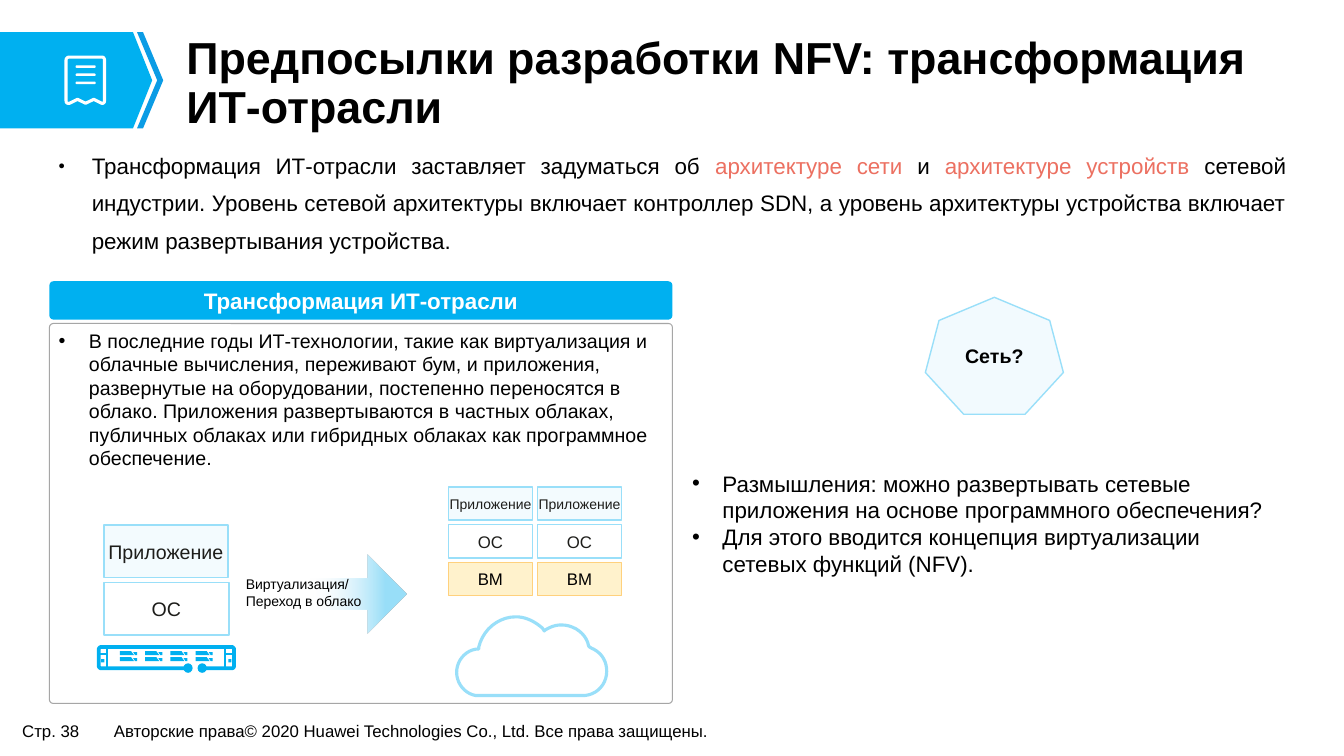
from dataclasses import dataclass

from lxml.etree import SubElement
from pptx import Presentation
from pptx.dml.color import RGBColor
from pptx.enum.shapes import MSO_CONNECTOR, MSO_SHAPE as Shape
from pptx.enum.text import MSO_ANCHOR as Anchor, PP_ALIGN as Align
from pptx.oxml.ns import qn
from pptx.util import Pt


@dataclass(frozen=True)
class Theme:
    font: str = "Arial"
    accent: str = "00B0F0"
    accent_dark: str = "0B9CE5"
    accent_soft: str = "99DFF9"
    accent_pale: str = "F3FBFE"
    arrow_start: str = "F7FAFD"
    machine_fill: str = "FFF2CC"
    machine_line: str = "FFD17D"
    panel_line: str = "A6A6A6"
    highlight: str = "EC7061"
    ink: str = "1D1D1A"
    black: str = "000000"
    white: str = "FFFFFF"
    title: int = 32
    body: int = 16
    label: int = 14
    small: int = 12
    tiny: int = 10


def rgb(color):
    return RGBColor.from_string(color)


def set_opacity(color_element, percent):
    SubElement(color_element, qn("a:alpha"), val=str(percent * 1000))


def add_bullet(paragraph, indent, character, percent):
    properties = paragraph._p.get_or_add_pPr()
    properties.set("marL", str(Pt(indent)))
    properties.set("indent", str(-Pt(indent)))
    SubElement(properties, qn("a:buSzPct"), val=str(percent * 1000))
    SubElement(properties, qn("a:buFont"), typeface="Arial")
    SubElement(properties, qn("a:buChar"), char=character)


def flatten(start, segments, steps=10):
    """Turn segments of one point (line) or three points (Bezier curve) into points."""
    points = [start]
    for segment in segments:
        if len(segment) == 2:
            points.append(segment)
            continue
        x0, y0 = points[-1]
        x1, y1, x2, y2, x3, y3 = segment
        for step in range(1, steps + 1):
            t = step / steps
            a, b, c, d = (1 - t) ** 3, 3 * t * (1 - t) ** 2, 3 * t * t * (1 - t), t ** 3
            points.append((a * x0 + b * x1 + c * x2 + d * x3,
                           a * y0 + b * y1 + c * y2 + d * y3))
    return points


class SlideBuilder:
    def __init__(self, slide, theme):
        self.shapes = slide.shapes
        self.theme = theme

    def put_text(self, shape, content, size=14, color=None, bold=False, align=Align.LEFT,
                 anchor=Anchor.TOP, inset=(7.2, 3.6), wrap=True, bullet=None, spacing=None):
        """Content is a list of paragraphs; each is a string or a list of (text, color)."""
        frame = shape.text_frame
        frame.word_wrap = wrap
        frame.vertical_anchor = anchor
        frame.margin_left = frame.margin_right = Pt(inset[0])
        frame.margin_top = frame.margin_bottom = Pt(inset[1])
        color = color or self.theme.black
        for index, runs in enumerate(content):
            paragraph = frame.add_paragraph() if index else frame.paragraphs[0]
            if bullet:
                add_bullet(paragraph, *bullet)
            paragraph.alignment = align
            if spacing:
                paragraph.line_spacing = spacing
            for text, run_color in [(runs, color)] if isinstance(runs, str) else runs:
                for number, line in enumerate(text.split("\n")):
                    if number:
                        paragraph.add_line_break()
                    run = paragraph.add_run()
                    run.text = line
                    font = run.font
                    font.name, font.size, font.bold = self.theme.font, Pt(size), bold
                    font.color.rgb = rgb(run_color)

    def paint(self, shape, fill=None, line=None, width=1):
        shape.shadow.inherit = False
        if fill:
            shape.fill.solid()
            shape.fill.fore_color.rgb = rgb(fill)
        else:
            shape.fill.background()
        if line:
            shape.line.color.rgb = rgb(line)
            shape.line.width = Pt(width)
        else:
            shape.line.fill.background()
        return shape

    def text(self, box, content, **style):
        self.put_text(self.shapes.add_textbox(*map(Pt, box)), content, **style)

    def preset(self, kind, box, fill=None, line=None, width=1, radius=None):
        shape = self.shapes.add_shape(kind, *map(Pt, box))
        if radius is not None:
            shape.adjustments[0] = radius
        return self.paint(shape, fill, line, width)

    def label_box(self, box, label, size, fill=None, line=None, color=None):
        shape = self.preset(Shape.RECTANGLE, box, fill, line or self.theme.accent_soft)
        self.put_text(shape, [label], size=size, color=color or self.theme.ink,
                      align=Align.CENTER, anchor=Anchor.MIDDLE, inset=(0, 0))

    def outline(self, points, fill=None, line=None, width=1, close=True):
        (x, y), *rest = [(Pt(px), Pt(py)) for px, py in points]
        builder = self.shapes.build_freeform(x, y)
        builder.add_line_segments(rest, close=close)
        return self.paint(builder.convert_to_shape(), fill, line, width)

    def line(self, x1, y1, x2, y2, color, width):
        connector = self.shapes.add_connector(MSO_CONNECTOR.STRAIGHT, *map(Pt, (x1, y1, x2, y2)))
        connector.line.color.rgb = rgb(color)
        connector.line.width = Pt(width)
        SubElement(connector._element.spPr, qn("a:effectLst"))

    def banner(self):
        theme = self.theme
        self.outline([(0, 23), (95, 23), (108.7, 57.4), (95, 91.7), (0, 91.7)], theme.accent)
        self.outline([(102.2, 23), (97.9, 23), (112.3, 57.4), (97.9, 91.7),
                      (102.2, 91.7), (116.6, 57.4)], theme.accent_dark)
        receipt = flatten((49.7, 40.8), [
            (72.7, 40.8), (74, 40.8, 74.7, 41.8, 74.7, 43), (74.7, 72),
            (74.7, 73.5, 73.7, 74, 72.7, 73.8), (67, 71), (61.2, 73.8), (55.4, 71),
            (49.7, 73.8), (48.2, 74, 47.2, 73.5, 47.2, 72), (47.2, 43),
            (47.2, 41.8, 48.2, 40.8, 49.7, 40.8)])
        self.outline(receipt, line=theme.white, width=2.2)
        for row in range(3):
            self.preset(Shape.ROUNDED_RECTANGLE, (54, 46.7 + 5.8 * row, 14.4, 1.8),
                        theme.white, radius=0.5)

    def cloud(self):
        points = flatten((368.6, 440.6), [
            (375.8, 440.6, 382.3, 444.2, 387.4, 448.6), (388.8, 450.7), (389.5, 450),
            (393.1, 447.8, 396.7, 446.4, 401, 446.4), (410.4, 446.4, 419, 452.9, 420.5, 461.5),
            (421.2, 462.2), (422.6, 463), (429.1, 465.8, 433.4, 471.6, 433.4, 479.5),
            (433.4, 488.2, 427, 496.1, 417.6, 496.8), (339.8, 496.8),
            (331.9, 495.4, 326.2, 488.2, 326.2, 480.2),
            (326.2, 472.3, 331.9, 465.1, 339.8, 463.7), (342, 463.7), (342, 462.2),
            (344.9, 450, 355.7, 440.6, 368.6, 440.6)])
        self.outline(points, line=self.theme.accent_soft, width=2.25)

    def server(self):
        color = self.theme.accent
        left, top, right, bottom = 70.6, 462.2, 167.2, 477.4
        self.outline([(136, bottom), (left + 1, bottom), (left, bottom - 1), (left, top + 1),
                      (left + 1, top), (right - 1, top), (right, top + 1),
                      (right, bottom - 1), (right - 1, bottom), (146, bottom)],
                     line=color, width=2.6, close=False)
        for x in (131, 141.1):
            self.preset(Shape.OVAL, (x, 473.8, 6.6, 6.8), color)
        for post, ear in ((76.4, 69.8), (160.9, 160.6)):
            self.line(post, 461.5, post, 478.1, color, 1.4)
            self.line(ear, 467.2, ear + 7.2, 467.2, color, 1.4)
            self.preset(Shape.RECTANGLE, (ear + 2.5, 470.9, 2.2, 2.2), color)
        slots = ([(0, 0), (8, 0), (10.1, 2.9), (0, 2.9)],
                 [(9.4, 0.7), (12.2, 0.7), (12.2, 2.9), (10.8, 2.9)])
        for bay in range(4):
            for row in range(2):
                for slot in slots:
                    self.outline([(85.7 + 18 * bay + x, 465.1 + 4.3 * row + y)
                                  for x, y in slot], color)

    def cloud_arrow(self):
        arrow = self.preset(Shape.RIGHT_ARROW, (209.5, 396, 80.6, 56.2), radius=0.4)
        arrow.fill.gradient()
        arrow.fill.gradient_angle = 0
        stops = zip(arrow.fill.gradient_stops, (0.15, 0.81),
                    (self.theme.arrow_start, self.theme.accent_soft))
        for stop, position, color in stops:
            stop.position = position
            stop.color.rgb = rgb(color)
        set_opacity(next(arrow._element.spPr.iter(qn("a:srgbClr"))), 0)


def main():
    theme = Theme()
    presentation = Presentation()
    presentation.slide_width, presentation.slide_height = Pt(960), Pt(540)
    builder = SlideBuilder(presentation.slides.add_slide(presentation.slide_layouts[6]), theme)

    footer = {"size": theme.small, "wrap": False, "inset": (6.5, 2.9)}
    builder.text((9.4, 511.9, 55.4, 20.9), ["Стр. 38"], **footer)
    builder.text((74.9, 511.9, 457.9, 20.9), [
        "Авторские права© 2020 Huawei Technologies Co., Ltd. Все права защищены."], **footer)
    builder.banner()
    builder.cloud()
    builder.label_box((74.2, 375.1, 88.6, 37.4), "Приложение", theme.label, theme.accent_pale)
    builder.label_box((74.2, 416.2, 89.3, 37.4), "ОС", theme.label)
    builder.server()

    layers = (("Приложение", theme.tiny, theme.accent_pale, None, None),
              ("ОС", theme.small, None, None, None),
              ("ВМ", theme.small, theme.machine_fill, theme.machine_line, theme.black))
    for column in range(2):
        for row, layer in enumerate(layers):
            builder.label_box((320.4 + 63.6 * column, 347.8 + 27 * row, 59.8, 23.8), *layer)

    centered = {"align": Align.CENTER, "anchor": Anchor.MIDDLE, "bold": True}
    heading = builder.preset(Shape.ROUNDED_RECTANGLE, (35.3, 200.9, 445, 27.4),
                             theme.accent, radius=0.106)
    builder.put_text(heading, ["Трансформация ИТ-отрасли"], size=theme.body,
                     color=theme.white, **centered)
    panel = builder.preset(Shape.ROUNDED_RECTANGLE, (35.3, 231.1, 445, 271.4),
                           line=theme.panel_line, width=0.75, radius=0.01)
    bullet = (21.6, "•", 100)
    builder.put_text(panel, [
        "В последние годы ИТ-технологии, такие как виртуализация и облачные вычисления, "
        "переживают бум, и приложения, развернутые на оборудовании, постепенно переносятся "
        "в облако. Приложения развертываются в частных облаках, публичных облаках или "
        "гибридных облаках как программное обеспечение."],
        size=theme.label, inset=(5.8, 2.9), bullet=bullet)

    network = builder.preset(Shape.HEPTAGON, (661, 212.4, 98.6, 83.5),
                             theme.accent, theme.accent_soft)
    set_opacity(next(network._element.spPr.iter(qn("a:srgbClr"))), 5)
    builder.put_text(network, ["Сеть?"], size=theme.label, inset=(2.9, 3.6), **centered)
    builder.text((487.4, 331.9, 427.7, 106.6), [
        "Размышления: можно развертывать сетевые приложения на основе программного обеспечения?",
        "Для этого вводится концепция виртуализации сетевых функций (NFV)."],
        size=theme.body, bullet=bullet)

    builder.cloud_arrow()
    builder.text((168.5, 407.5, 104.4, 31), ["Виртуализация/\nПереход в облако"],
                 size=theme.tiny, anchor=Anchor.MIDDLE)
    builder.text((35.3, 97.9, 889.9, 100.8), [[
        ("Трансформация ИТ-отрасли заставляет задуматься об ", theme.black),
        ("архитектуре сети ", theme.highlight),
        ("и ", theme.black),
        ("архитектуре устройств ", theme.highlight),
        ("сетевой индустрии. Уровень сетевой архитектуры включает контроллер SDN, а уровень "
         "архитектуры устройства включает режим развертывания устройства.", theme.black)]],
        size=theme.body, align=Align.JUSTIFY, inset=(6.5, 2.9), spacing=1.4,
        bullet=(23.8, "●", 50))
    builder.text((125.3, 35.3, 774, 50.4),
                 ["Предпосылки разработки NFV: трансформация ИТ-отрасли"], size=theme.title,
                 bold=True, anchor=Anchor.MIDDLE, inset=(7.9, 4.3), spacing=0.9)
    presentation.save("out.pptx")


if __name__ == "__main__":
    main()
